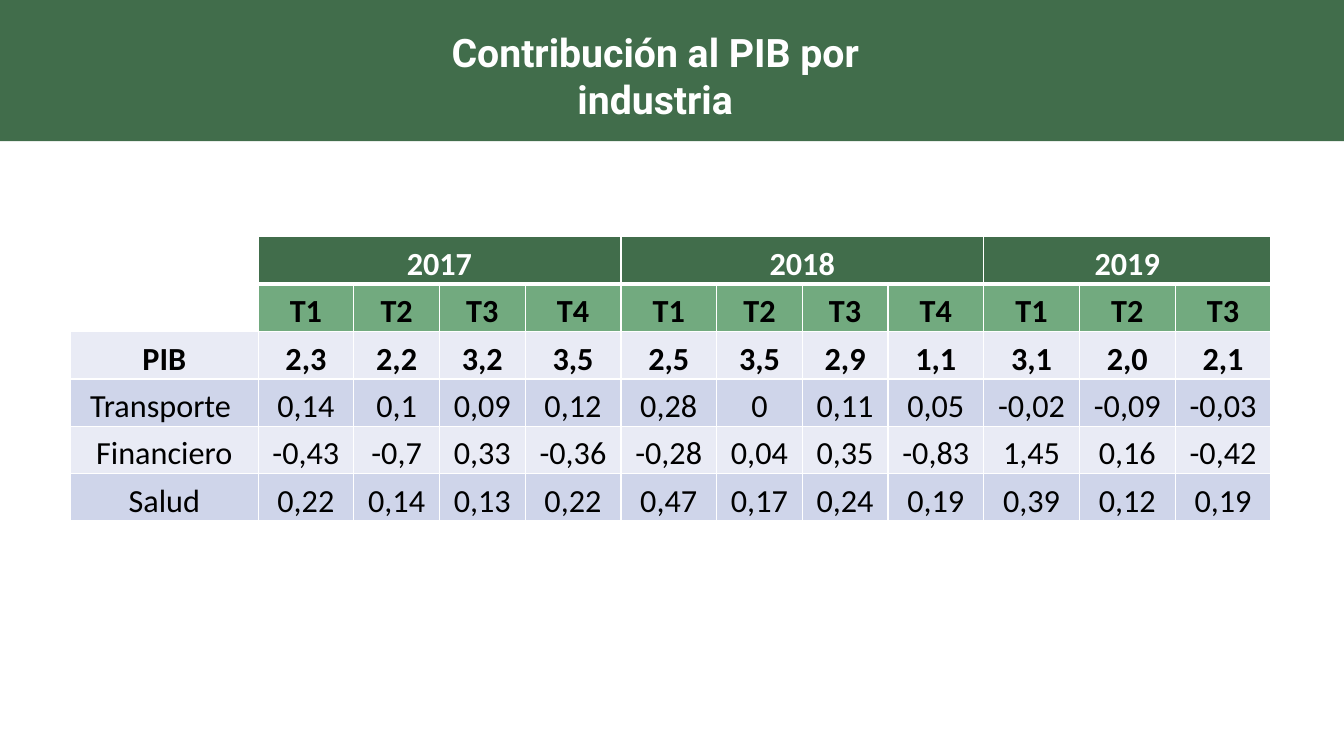
from lxml import etree
from pptx import Presentation
from pptx.dml.color import RGBColor
from pptx.enum.shapes import MSO_SHAPE
from pptx.enum.text import MSO_ANCHOR, MSO_AUTO_SIZE, PP_ALIGN
from pptx.oxml.ns import qn
from pptx.util import Inches, Pt

RECT = MSO_SHAPE.RECTANGLE
CENTER = PP_ALIGN.CENTER
MIDDLE, BOTTOM = MSO_ANCHOR.MIDDLE, MSO_ANCHOR.BOTTOM
NO_FIT = MSO_AUTO_SIZE.NONE

WHITE = RGBColor(0xFF, 0xFF, 0xFF)
BLACK = RGBColor(0x00, 0x00, 0x00)
GREEN = RGBColor(0x41, 0x6D, 0x4B)
LIGHT_GREEN = RGBColor(0x72, 0xAA, 0x7F)
PALE = RGBColor(0xE9, 0xEB, 0xF5)
LAVENDER = RGBColor(0xCF, 0xD5, 0xEA)

TITLE = "Contribución al PIB por industria"
YEARS = {"2017": 4, "2018": 4, "2019": 3}
INDUSTRIES = [
    ("PIB", "2,3 2,2 3,2 3,5 2,5 3,5 2,9 1,1 3,1 2,0 2,1"),
    ("Transporte ", "0,14 0,1 0,09 0,12 0,28 0 0,11 0,05 -0,02 -0,09 -0,03"),
    ("Financiero", "-0,43 -0,7 0,33 -0,36 -0,28 0,04 0,35 -0,83 1,45 0,16 -0,42"),
    ("Salud", "0,22 0,14 0,13 0,22 0,47 0,17 0,24 0,19 0,39 0,12 0,19"),
]
LABEL_COL, WIDE_COL, NARROW_COL = 1.86, 0.95, 0.85
COLS = [LABEL_COL] + [WIDE_COL, NARROW_COL, NARROW_COL, WIDE_COL,
                      WIDE_COL, NARROW_COL, NARROW_COL] + [WIDE_COL] * 4
ROW_HEIGHT = 0.47


def write(tf, text, font="Calibri", size=23, color=BLACK, bold=False):
    """Write one centred, formatted paragraph in a text frame."""
    p = tf.paragraphs[0]
    p.alignment = CENTER
    r = p.add_run()
    r.text = text
    r.font.name, r.font.size, r.font.bold = font, Pt(size), bold
    r.font.color.rgb = color


def style_cell(cell, fill, top=1, bottom=1):
    """Give a cell its fill, zero margins and white borders."""
    cell.fill.solid()
    cell.fill.fore_color.rgb = fill
    cell.vertical_anchor = BOTTOM
    cell.margin_left = cell.margin_right = cell.margin_top = cell.margin_bottom = 0
    props = cell._tc.get_or_add_tcPr()
    borders = [("a:lnL", 1), ("a:lnR", 1), ("a:lnT", top), ("a:lnB", bottom)]
    for i, (tag, width) in enumerate(borders):
        ln = etree.Element(qn(tag), w=str(Pt(width)))
        solid = etree.SubElement(ln, qn("a:solidFill"))
        etree.SubElement(solid, qn("a:srgbClr"), val=str(WHITE))
        props.insert(i, ln)


def add_header(slide, x, y, w, h):
    """Draw the green band with the slide title on it."""
    sp = slide.shapes.add_shape(RECT, x, y, w, h)
    sp.shadow.inherit = False
    sp.fill.solid()
    sp.fill.fore_color.rgb = GREEN
    sp.line.fill.background()
    title = slide.shapes.title
    title._element.addprevious(sp._element)
    title.left, title.top = x + int(w * 0.308), y + int(h * 0.164)
    title.width, title.height = int(w * 0.359), int(h * 0.743)
    tf = title.text_frame
    tf.word_wrap, tf.auto_size, tf.vertical_anchor = True, NO_FIT, MIDDLE
    write(tf, TITLE, font="Roboto", size=28, color=WHITE, bold=True)


def add_gdp_table(slide, x, y, w, h):
    """Draw the quarterly contributions under merged year headings."""
    year_row, quarter_row = [""], [""]
    for year, count in YEARS.items():
        year_row += [year] + [""] * (count - 1)
        quarter_row += [f"T{q + 1}" for q in range(count)]
    rows = [year_row, quarter_row] + [[name] + values.split() for name, values in INDUSTRIES]
    fills = [GREEN, LIGHT_GREEN, PALE, LAVENDER, PALE, LAVENDER]
    table = slide.shapes.add_table(len(rows), len(COLS), x, y, w, h).table
    table.first_row = table.horz_banding = False
    for col, share in zip(table.columns, COLS):
        col.width = int(w * share / sum(COLS))
    for i, (row, fill) in enumerate(zip(rows, fills)):
        table.rows[i].height = h // len(rows)
        for j, text in enumerate(row):
            cell = table.cell(i, j)
            blank = i < 2 and j == 0
            style_cell(cell, WHITE if blank else fill,
                       top=3 if i == 1 else 1, bottom=3 if i == 0 else 1)
            if text:
                write(cell.text_frame, text, color=WHITE if i == 0 else BLACK, bold=i < 3)
    start = 1
    for count in YEARS.values():
        table.cell(0, start).merge(table.cell(0, start + count - 1))
        start += count


def main():
    """Build and save the presentation."""
    prs = Presentation()
    prs.slide_width, prs.slide_height = Inches(13.33), Inches(7.5)
    slide = prs.slides.add_slide(prs.slide_layouts[5])
    add_header(slide, 0, 0, prs.slide_width, Inches(1.4))
    add_gdp_table(slide, Inches(0.7), Inches(2.35), Inches(sum(COLS)), Inches(6 * ROW_HEIGHT))
    prs.save("out.pptx")


if __name__ == "__main__":
    main()
